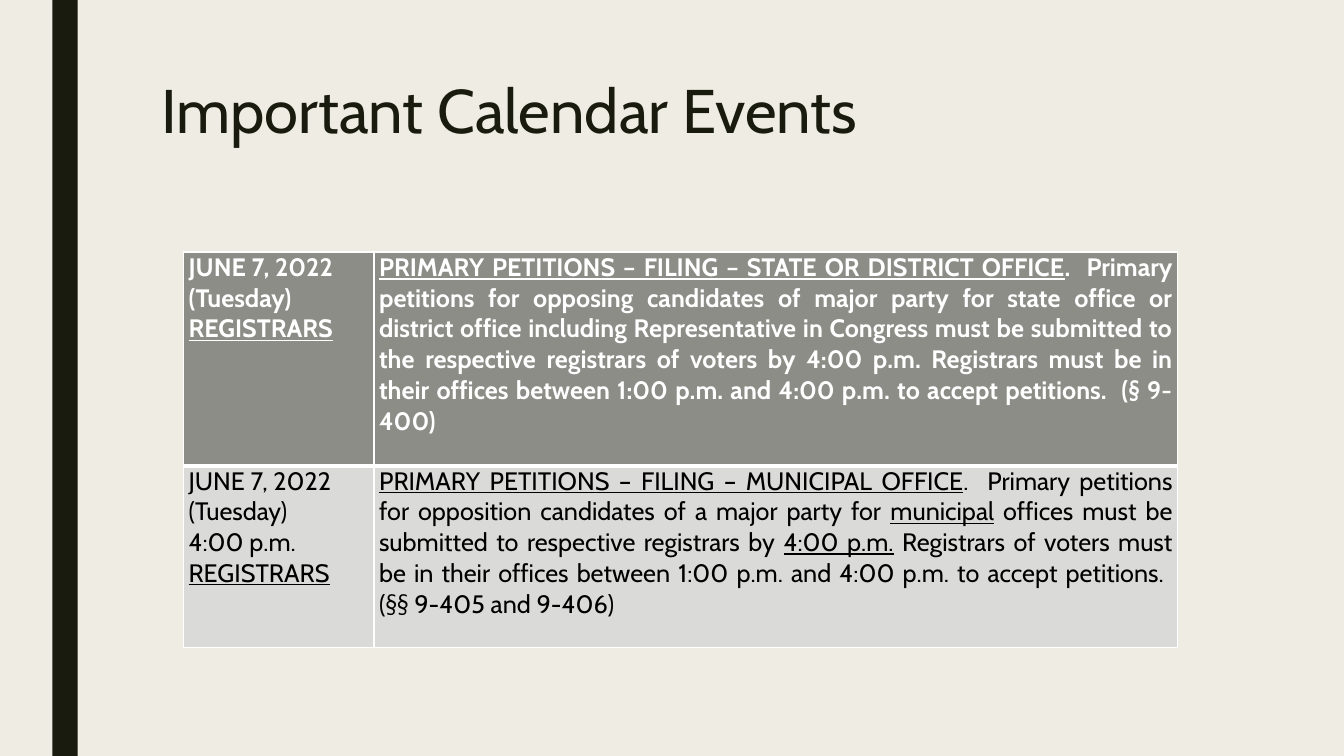
from lxml.etree import SubElement
from pptx import Presentation
from pptx.dml.color import RGBColor
from pptx.enum.shapes import MSO_SHAPE
from pptx.enum.text import MSO_ANCHOR, PP_ALIGN
from pptx.oxml.ns import qn
from pptx.util import Inches, Pt


def rgb(value):
    return RGBColor.from_string(value)


def add_run(p, text, color, **formats):
    r = p.add_run()
    r.text = text
    r.font.color.rgb = rgb(color)
    for name, value in {"name": "Cabin", **formats}.items():
        setattr(r.font, name, value)


prs = Presentation()
prs.slide_width, prs.slide_height = Inches(13.33), Inches(7.5)
s = prs.slides.add_slide(prs.slide_layouts[6])
s.background.fill.solid()
s.background.fill.fore_color.rgb = rgb("EFEDE3")

bar = s.shapes.add_shape(MSO_SHAPE.RECTANGLE, Inches(0.52), 0, Inches(0.25), Inches(7.5))
bar.shadow.inherit = False
bar.fill.solid()
bar.fill.fore_color.rgb = rgb("191B0E")
bar.line.fill.background()

title = s.shapes.add_textbox(Inches(1.5), Inches(0.75), Inches(10.5), Inches(1.62))
tf = title.text_frame
tf.word_wrap = True
tf.vertical_anchor = MSO_ANCHOR.TOP
p = tf.paragraphs[0]
p.line_spacing = 0.89
add_run(p, "Important Calendar Events", "191B0E", size=Pt(44))

events = [
    {
        "height": 2.12, "fill": "8C8D86", "color": "FFFFFF", "bold": True,
        "borders": {"L": 1, "R": 1, "T": 1, "B": 3},
        "cells": [
            [[("JUNE 7, 2022", False)], [("(Tuesday)", False)], [("REGISTRARS", True)]],
            [[
                ("PRIMARY PETITIONS – FILING – STATE OR DISTRICT OFFICE", True),
                (".  Primary petitions for opposing candidates of major party for state "
                 "office or district office including Representative in Congress must be "
                 "submitted to the respective registrars of voters by 4:00 p.m. Registrars "
                 "must be in their offices between 1:00 p.m. and 4:00 p.m. to accept "
                 "petitions.  (§ 9-400)", False),
            ]],
        ],
    },
    {
        "height": 1.8, "fill": "DADBD9", "color": "000000", "bold": False,
        "borders": {"L": 1, "R": 1, "T": 3, "B": 1},
        "cells": [
            [[("JUNE 7, 2022", False)], [("(Tuesday)", False)], [("4:00 p.m.", False)],
             [("REGISTRARS", True)]],
            [[
                ("PRIMARY PETITIONS – FILING – MUNICIPAL OFFICE", True),
                (".  Primary petitions for opposition candidates of a major party for ", False),
                ("municipal", True),
                (" offices must be submitted to respective registrars by ", False),
                ("4:00 p.m.", True),
                (" Registrars of voters must be in their offices between 1:00 p.m. and "
                 "4:00 p.m. to accept petitions.  (§§ 9-405 and 9-406)", False),
            ]],
        ],
    },
]

table = s.shapes.add_table(
    len(events), 2, Inches(1.82), Inches(2.5), Inches(9.86), Inches(3.92)).table
for column, width in zip(table.columns, (1.89, 7.97)):
    column.width = Inches(width)

margins = {"margin_left": Inches(0.05), "margin_right": Inches(0.05),
           "margin_top": 0, "margin_bottom": 0}
for row, event in zip(table.rows, events):
    row.height = Inches(event["height"])
    for cell, paragraphs in zip(row.cells, event["cells"]):
        for name, value in margins.items():
            setattr(cell, name, value)
        tc_pr = cell._tc.get_or_add_tcPr()
        for side, width in event["borders"].items():
            ln = SubElement(tc_pr, qn(f"a:ln{side}"), w=str(Pt(width)))
            SubElement(SubElement(ln, qn("a:solidFill")), qn("a:srgbClr"), val="FFFFFF")
        cell.fill.solid()
        cell.fill.fore_color.rgb = rgb(event["fill"])
        tf = cell.text_frame
        for i, runs in enumerate(paragraphs):
            p = tf.add_paragraph() if i else tf.paragraphs[0]
            p.alignment = PP_ALIGN.JUSTIFY
            for text, underline in runs:
                add_run(p, text, event["color"], size=Pt(18),
                        bold=event["bold"], underline=underline)

prs.save("out.pptx")
